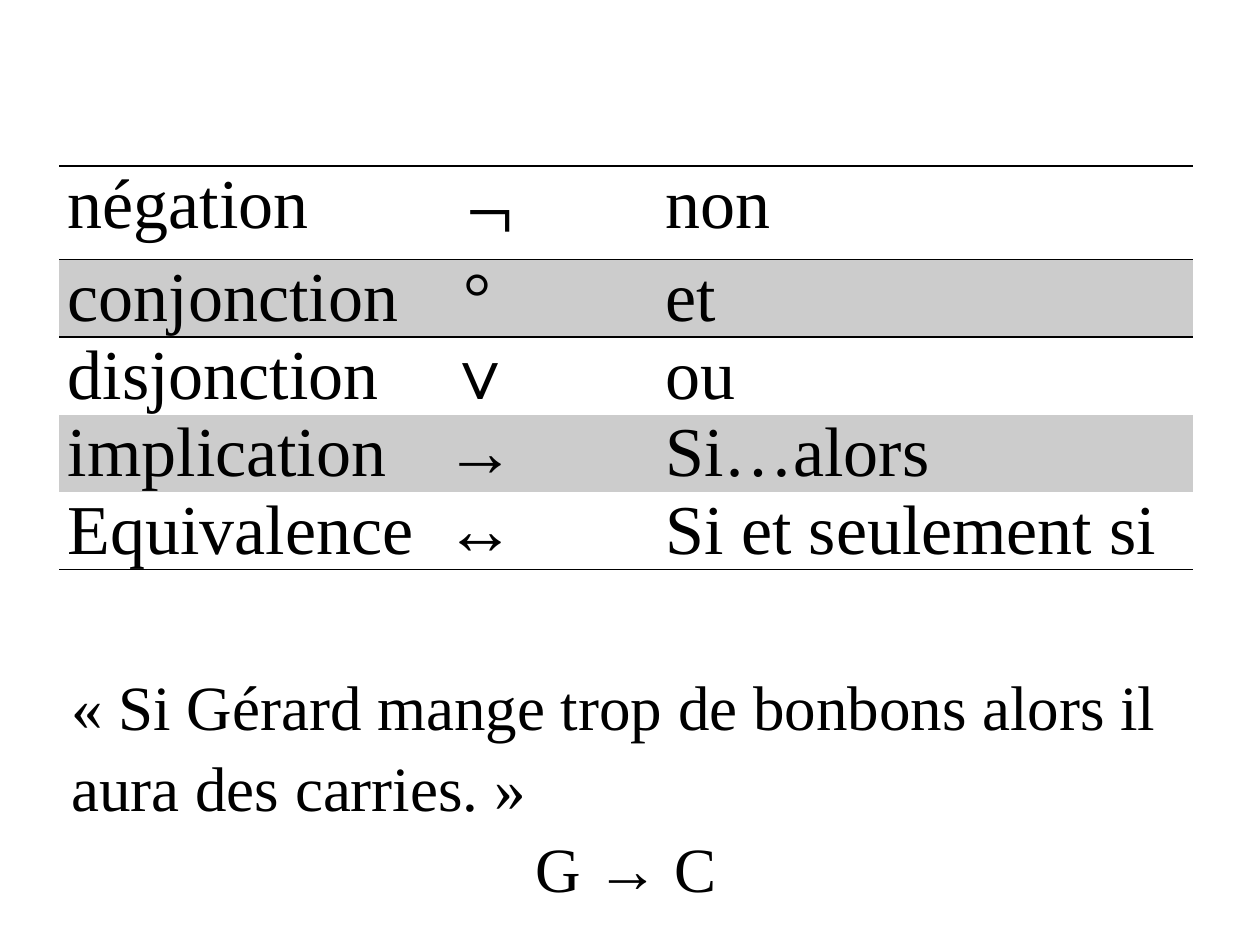
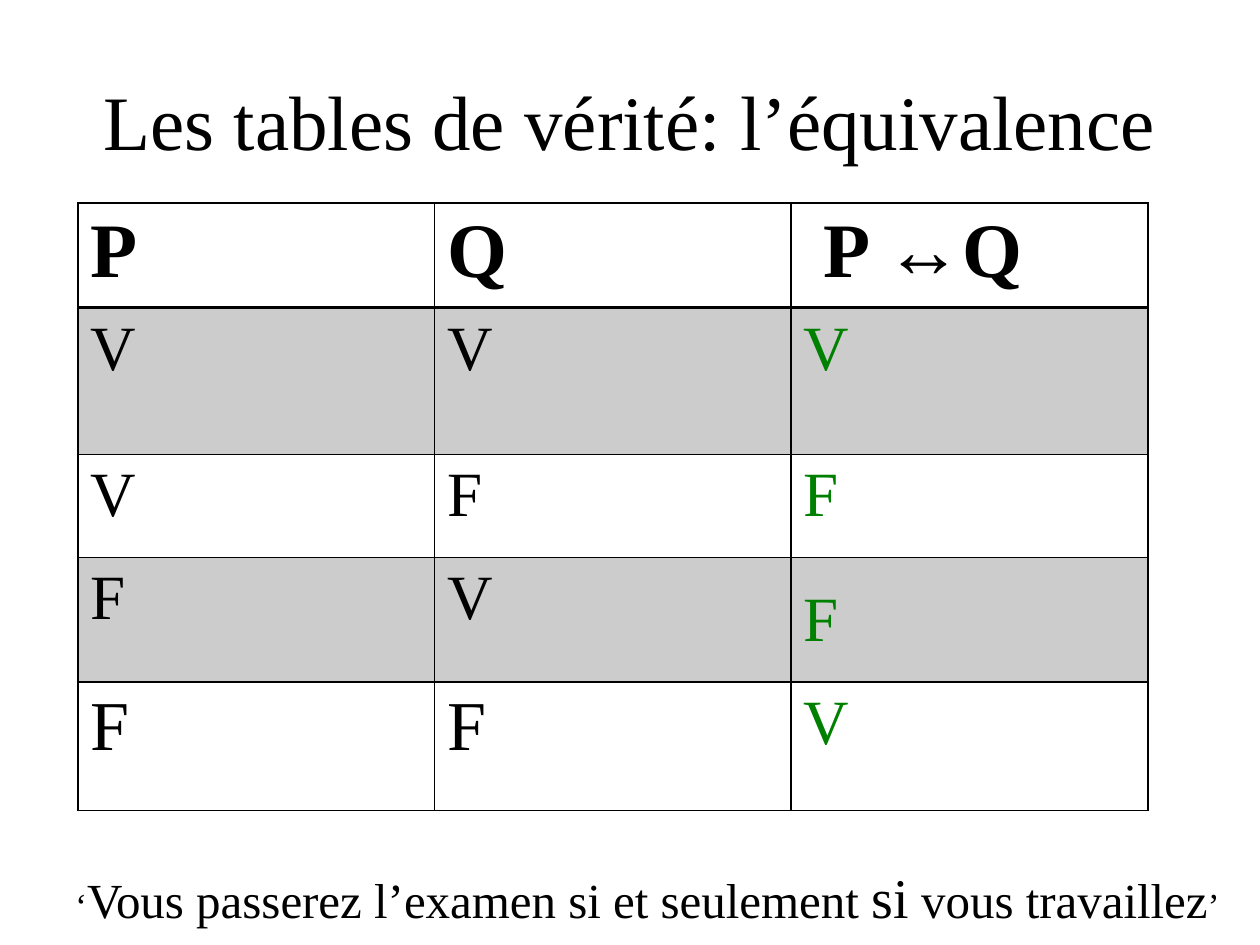
from pptx import Presentation
from pptx.dml.color import RGBColor
from pptx.enum.text import MSO_ANCHOR, PP_ALIGN
from pptx.oxml import parse_xml
from pptx.oxml.ns import nsdecls, qn
from pptx.util import Cm, Pt

BLACK = RGBColor(0, 0, 0)
WHITE = RGBColor(255, 255, 255)
GREY = RGBColor(204, 204, 204)
GREEN = RGBColor(0, 128, 0)
FONT = "Times New Roman"
PLAIN = "{2D5ABB26-0587-4C30-8999-92F81FD0307C}"


def write(para, text, size=36, color=BLACK, bold=False, align=None):
    run = para.add_run()
    run.text = text
    font = run.font
    font.name, font.size, font.bold = FONT, Pt(size), bold
    font.color.rgb = color
    if align is not None:
        para.alignment = align


def edge(cell, side, width):
    """Draw one border of a cell; side is L, R, T or B, width is in points."""
    cell._tc.get_or_add_tcPr().append(parse_xml(
        f'<a:ln{side} {nsdecls("a")} w="{Pt(width)}"><a:solidFill>'
        f'<a:srgbClr val="{BLACK}"/></a:solidFill></a:ln{side}>'))


class Deck:
    def __init__(self):
        self.prs = Presentation()
        self.prs.slide_width, self.prs.slide_height = Cm(25.4), Cm(19.05)
        self.slide = None

    def page(self):
        self.slide = self.prs.slides.add_slide(self.prs.slide_layouts[6])

    def text(self, box, *paras, anchor=MSO_ANCHOR.TOP):
        """Each paragraph is a list of (text, format) runs."""
        frame = self.slide.shapes.add_textbox(*map(Cm, box)).text_frame
        frame.word_wrap = True
        frame.vertical_anchor = anchor
        for i, runs in enumerate(paras):
            para = frame.add_paragraph() if i else frame.paragraphs[0]
            para.line_spacing = 1.07
            for text, style in runs:
                write(para, text, **style)

    def title(self, text):
        style = dict(size=44, align=PP_ALIGN.CENTER)
        self.text((1.27, 0.76, 22.86, 3.18), [(text, style)],
                  anchor=MSO_ANCHOR.MIDDLE)

    def table(self, left, top, cols, rows, data, style, edges, pad=None):
        """style and edges give the format and the borders of a cell."""
        frame = self.slide.shapes.add_table(
            len(rows), len(cols), Cm(left), Cm(top),
            Cm(sum(cols)), Cm(sum(rows)))
        grid = frame.table
        grid.first_row = grid.horz_banding = False
        grid._tbl.tblPr.find(qn("a:tableStyleId")).text = PLAIN
        for col, width in zip(grid.columns, cols):
            col.width = Cm(width)
        for row, height in zip(grid.rows, rows):
            row.height = Cm(height)
        for r, line in enumerate(data):
            for c, text in enumerate(line):
                cell = grid.cell(r, c)
                if pad is not None:
                    cell.margin_left = cell.margin_right = Cm(pad)
                    cell.margin_top = cell.margin_bottom = 0
                for side, width in edges(r).items():
                    edge(cell, side, width)
                cell.fill.solid()
                cell.fill.fore_color.rgb = GREY if r % 2 else WHITE
                write(cell.text_frame.paragraphs[0], text, **style(r, c))
        return grid


def signs(deck):
    deck.page()
    data = [
        ("négation", " ¬", "non"),
        ("conjonction", " °", "et"),
        ("disjonction", "∨", "ou"),
        ("implication", "→", "Si…alors"),
        ("Equivalence", "↔", "Si et seulement si"),
    ]
    rules = {0: dict(T=1, B=1), 1: dict(T=1), 4: dict(B=1)}
    deck.table(
        1.19, 3.35, (7.62, 4.42, 10.82), [1.88] + [1.56] * 4, data,
        style=lambda r, c: dict(size=48 if (r, c) == (0, 1) else 40),
        edges=lambda r: rules.get(r, {}), pad=0.18)
    deck.text(
        (1.19, 13.23, 22.86, 5.2),
        [("«\u00a0Si Gérard mange trop de bonbons alors il aura des carries.\u00a0»", {})],
        [("G → C", dict(align=PP_ALIGN.CENTER))])


def truth(deck):
    deck.page()
    deck.title("Les tables de vérité: l’équivalence")
    data = [("P", "Q", " P ↔Q"), "VVV", "VFF", "FVF", "FFV"]

    def style(r, c):
        if r == 0:
            return dict(size=44, bold=True)
        if c == 2:
            return dict(color=GREEN)
        return dict(size=40 if r == 4 else 36)

    def edges(r):
        return dict(L=1, R=1, T=2 if r == 1 else 1, B=2 if r == 0 else 1)

    grid = deck.table(1.57, 4.09, [7.19] * 3, (1.96, 2.95, 2.08, 2.51, 2.59),
                      data, style, edges)
    grid.cell(3, 2).margin_top = Cm(0.56)
    parts = [("‘", 20), ("Vous passerez l’examen si et seulement ", 28),
             ("si", 32), (" vous travaillez", 28), ("’", 20)]
    deck.text((1.27, 17.17, 24.13, 1.63),
              [(text, dict(size=size)) for text, size in parts])


def main():
    deck = Deck()
    signs(deck)
    truth(deck)
    deck.prs.save("out.pptx")


if __name__ == "__main__":
    main()
